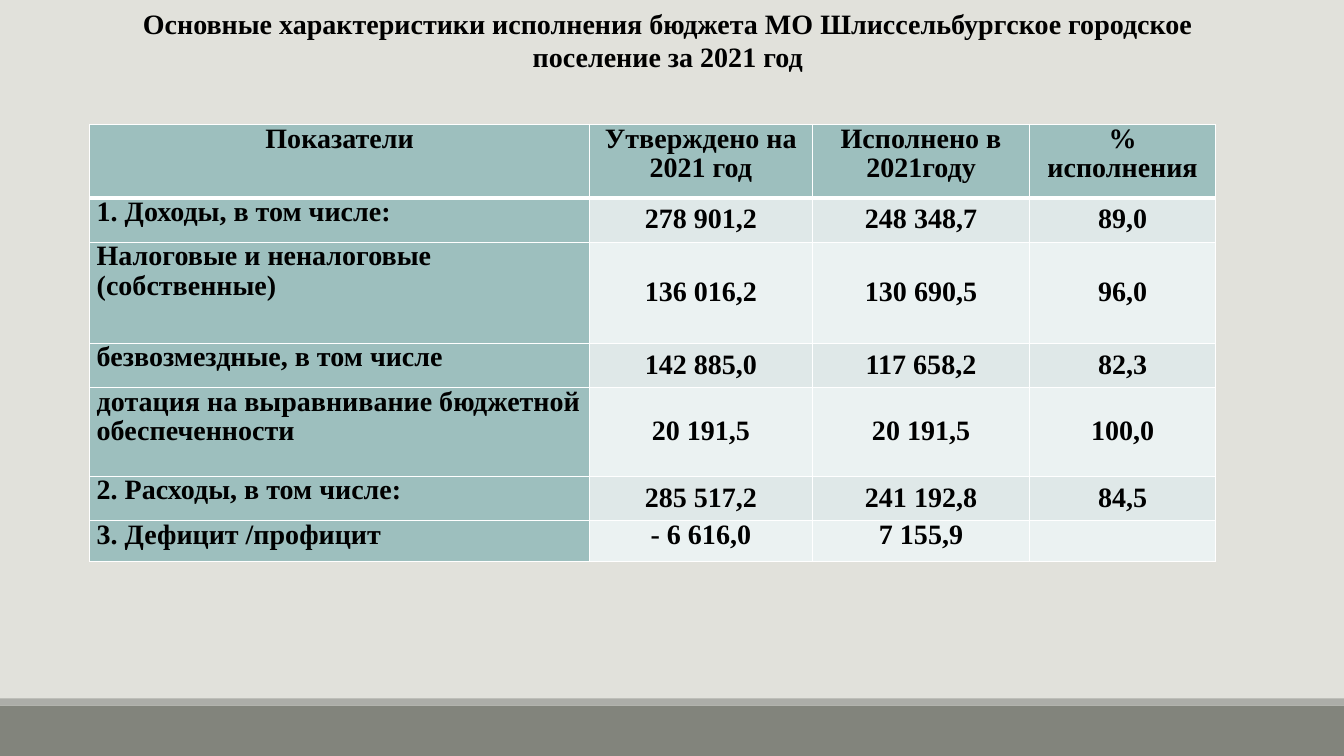
from lxml.etree import SubElement as Sub
from pptx import Presentation
from pptx.dml.color import RGBColor
from pptx.enum.shapes import MSO_SHAPE as Shape
from pptx.enum.text import MSO_ANCHOR as Anchor, MSO_AUTO_SIZE as Auto, PP_ALIGN as Align
from pptx.oxml.ns import qn
from pptx.util import Pt


def paint(fill, hue):
    fill.solid()
    fill.fore_color.rgb = RGBColor.from_string(hue)


def write(frame, text, align, space):
    para = frame.paragraphs[0]
    para.alignment = align
    para.line_spacing = space
    run = para.add_run()
    run.text = text
    look = {"name": "Times New Roman", "size": Pt(20), "bold": True}
    for key, val in look.items():
        setattr(run.font, key, val)
    paint(run.font.fill, "000000")


deck = Presentation()
deck.slide_width, deck.slide_height = Pt(960), Pt(540)
slide = deck.slides.add_slide(deck.slide_layouts[5])
paint(slide.background.fill, "E1E1DB")

# Bands at the foot
for top, high, hue in [(504, 36, "82847C"), (498.8, 5.2, "ACADA8")]:
    band = slide.shapes.add_shape(Shape.RECTANGLE, 0, Pt(top), Pt(960), Pt(high))
    band.shadow.inherit = False
    band.line.fill.background()
    paint(band.fill, hue)

# Title
title = slide.shapes.title
place = {"left": 58.3, "top": 0.7, "width": 837.4, "height": 55.4}
for key, val in place.items():
    setattr(title, key, Pt(val))
form = {"word_wrap": True, "auto_size": Auto.NONE, "vertical_anchor": Anchor.TOP}
for key, val in form.items():
    setattr(title.text_frame, key, val)
write(title.text_frame,
      "Основные характеристики исполнения бюджета МО Шлиссельбургское "
      "городское поселение за 2021 год", Align.CENTER, 1.0)

# Budget table
rows = [
    ("Показатели", "Утверждено на 2021 год", "Исполнено в 2021году", "% исполнения"),
    ("1. Доходы, в том числе:", "278 901,2", "248 348,7", "89,0"),
    ("Налоговые и неналоговые (собственные)", "136 016,2", "130 690,5", "96,0"),
    ("безвозмездные, в том числе", "142 885,0", "117 658,2", "82,3"),
    ("дотация на выравнивание бюджетной обеспеченности", "20 191,5", "20 191,5", "100,0"),
    ("2. Расходы, в том числе:", "285 517,2", "241 192,8", "84,5"),
    ("3. Дефицит /профицит", "- 6 616,0", "7 155,9", ""),
]
wide = [357, 159.1, 155.5, 132.5]
high = [52.4, 31.7, 72, 31.7, 63.4, 31.7, 29.3]
last = len(rows) - 1
grid = slide.shapes.add_table(len(rows), len(wide), Pt(64.1), Pt(89),
                              Pt(sum(wide)), Pt(sum(high))).table
for col, size in zip(grid.columns, wide):
    col.width = Pt(size)
for row, size in zip(grid.rows, high):
    row.height = Pt(size)

for r, row in enumerate(rows):
    for c, text in enumerate(row):
        cell = grid.cell(r, c)
        mid = c > 0 and 0 < r < last
        form = {"margin_left": Pt(5), "margin_right": Pt(5),
                "margin_top": 0, "margin_bottom": 0,
                "vertical_anchor": Anchor.MIDDLE if mid else Anchor.TOP}
        for key, val in form.items():
            setattr(cell, key, val)

        # White borders, thick under the head row
        prop = cell._tc.get_or_add_tcPr()
        for side in "LRTB":
            thick = (r, side) in [(0, "B"), (1, "T")]
            line = Sub(prop, qn("a:ln" + side), w=str(Pt(3 if thick else 1)))
            Sub(Sub(line, qn("a:solidFill")), qn("a:srgbClr"), val="FFFFFF")

        head = r == 0 or c == 0
        paint(cell.fill, "9DBFBE" if head else "DFE8E8" if r % 2 else "EBF2F2")
        if text:
            align = Align.LEFT if c == 0 and r > 0 else Align.CENTER
            write(cell.text_frame, text, align, 0.95)

deck.save("out.pptx")
